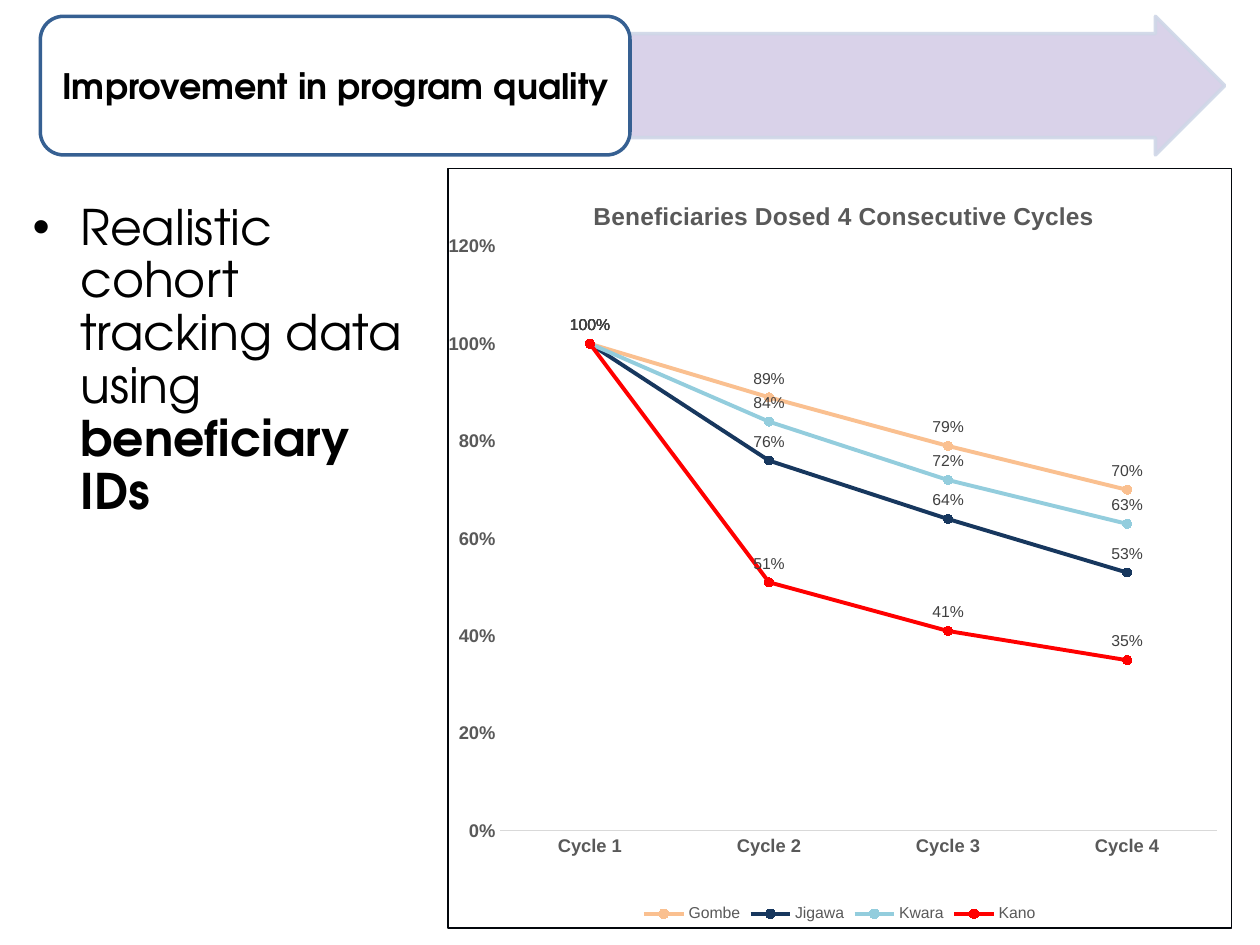
"""Build the slide on improvement in program quality."""
from dataclasses import dataclass

from lxml import etree
from pptx import Presentation
from pptx.chart.data import CategoryChartData
from pptx.dml.color import RGBColor
from pptx.enum.chart import (XL_CHART_TYPE, XL_LABEL_POSITION, XL_LEGEND_POSITION,
                             XL_MARKER_STYLE, XL_TICK_MARK)
from pptx.enum.shapes import MSO_SHAPE
from pptx.enum.text import MSO_ANCHOR, PP_ALIGN
from pptx.oxml import parse_xml
from pptx.oxml.ns import nsdecls, qn
from pptx.util import Inches, Pt

LINE_CHART = XL_CHART_TYPE.LINE_MARKERS
ABOVE = XL_LABEL_POSITION.ABOVE
BOTTOM = XL_LEGEND_POSITION.BOTTOM
CIRCLE = XL_MARKER_STYLE.CIRCLE
NO_TICK = XL_TICK_MARK.NONE
ARROW, ROUNDED = MSO_SHAPE.RIGHT_ARROW, MSO_SHAPE.ROUNDED_RECTANGLE
TOP, MIDDLE = MSO_ANCHOR.TOP, MSO_ANCHOR.MIDDLE
LEFT, CENTER = PP_ALIGN.LEFT, PP_ALIGN.CENTER
COLUMNS, ROWS = 100, 75


@dataclass(frozen=True)
class Theme:
    """Colours, fonts and type sizes of the slide."""
    text_font: str = "TeX Gyre Adventor"
    chart_font: str = "Arial"
    black: str = "000000"
    white: str = "FFFFFF"
    lilac: str = "D9D2E9"
    pale_blue: str = "CFD7E7"
    blue: str = "366092"
    border: str = "03070C"
    axis_text: str = "595959"
    label_text: str = "404040"
    axis_line: str = "D9D9D9"
    heading: float = 20
    body: float = 28
    chart_title: float = 14
    axis: float = 10.5
    small: float = 9


def apply(target, values):
    """Set every attribute in values on the target."""
    for name, value in values.items():
        setattr(target, name, value)


class SlideBuilder:
    """Place styled elements on a slide by grid columns and rows."""

    def __init__(self, presentation, theme):
        self.theme = theme
        self.width = presentation.slide_width
        self.height = presentation.slide_height
        self.slide = presentation.slides.add_slide(presentation.slide_layouts[6])

    def place(self, left, top, width, height):
        """Turn grid units into slide lengths."""
        column, row = self.width / COLUMNS, self.height / ROWS
        return [round(n) for n in (left * column, top * row, width * column, height * row)]

    def font(self, font, family, size, color, bold=False):
        """Style one font."""
        apply(font, {"name": family, "size": Pt(size), "bold": bold})
        font.color.rgb = RGBColor.from_string(color)

    def paint(self, fill, color):
        """Give a solid fill."""
        fill.solid()
        fill.fore_color.rgb = RGBColor.from_string(color)

    def stroke(self, line, color, width):
        """Give a solid line."""
        self.paint(line.fill, color)
        line.width = Pt(width)

    def shape(self, kind, area, fill, line, adjustments, opacity=100):
        """Add a preset shape with a 2 pt outline."""
        shape = self.slide.shapes.add_shape(kind, *self.place(*area))
        shape.shadow.inherit = False
        for index, value in enumerate(adjustments):
            shape.adjustments[index] = value
        self.paint(shape.fill, fill)
        self.stroke(shape.line, line, 2)
        if opacity < 100:
            color = shape.line._get_or_add_ln().find(".//" + qn("a:srgbClr"))
            etree.SubElement(color, qn("a:alpha"), val=str(opacity * 1000))

    def text(self, area, runs, size, insets, anchor=TOP, align=LEFT):
        """Add a text box of (text, bold) runs and return its paragraph."""
        frame = self.slide.shapes.add_textbox(*self.place(*area)).text_frame
        side, edge = (Inches(inset) for inset in insets)
        apply(frame, {"word_wrap": True, "vertical_anchor": anchor,
                      "margin_left": side, "margin_right": side,
                      "margin_top": edge, "margin_bottom": edge})
        paragraph = frame.paragraphs[0]
        paragraph.alignment = align
        for content, bold in runs:
            run = paragraph.add_run()
            run.text = content
            self.font(run.font, self.theme.text_font, size, self.theme.black, bold)
        return paragraph

    def bullet(self, area, runs, size):
        """Add a bulleted paragraph with a hanging indent."""
        paragraph = self.text(area, runs, size, (0.1, 0.05))
        apply(paragraph, {"line_spacing": 0.9, "space_before": Pt(10)})
        properties = paragraph._p.get_or_add_pPr()
        properties.set("marL", str(Inches(0.5)))
        properties.set("indent", str(Inches(-0.38)))
        color = etree.SubElement(properties, qn("a:buClr"))
        etree.SubElement(color, qn("a:srgbClr"), val=self.theme.black)
        etree.SubElement(properties, qn("a:buFont"), typeface=self.theme.chart_font)
        etree.SubElement(properties, qn("a:buChar"), char="•")

    def layout(self, parent, values, before):
        """Fix the position of a chart part by shares of the chart."""
        for old in parent.findall(qn("c:layout")):
            parent.remove(old)
        items = "".join(f'<c:{name} val="{value}"/>' for name, value in values.items())
        layout = parse_xml(f'<c:layout {nsdecls("c")}><c:manualLayout>{items}'
                           '</c:manualLayout></c:layout>')
        parent.insert(parent.index(parent.find(qn(before))), layout)

    def line_chart(self, area, title, categories, series):
        """Add a percentage line chart from name: (colour, values)."""
        theme = self.theme
        data = CategoryChartData(number_format="0%")
        data.categories = categories
        for name, (_, values) in series.items():
            data.add_series(name, values)
        chart = self.slide.shapes.add_chart(LINE_CHART, *self.place(*area), data).chart
        self.font(chart.font, theme.chart_font, 10, theme.black)
        self.chart_frame(chart, title)
        for axis in (chart.category_axis, chart.value_axis):
            apply(axis, {"major_tick_mark": NO_TICK, "minor_tick_mark": NO_TICK,
                         "has_major_gridlines": False})
            self.font(axis.tick_labels.font, theme.chart_font, theme.axis, theme.axis_text, True)
        self.stroke(chart.category_axis.format.line, theme.axis_line, 0.75)
        value_axis = chart.value_axis
        apply(value_axis, {"minimum_scale": 0, "maximum_scale": 1.2, "major_unit": 0.2})
        apply(value_axis.tick_labels, {"number_format": "0%", "number_format_is_linked": False})
        value_axis.format.line.fill.background()
        for line, (color, _) in zip(chart.plots[0].series, series.values()):
            self.series(line, color)

    def chart_frame(self, chart, title):
        """Style the title, legend, plot area and border of a chart."""
        theme = self.theme
        apply(chart, {"has_title": True, "has_legend": True})
        paragraph = chart.chart_title.text_frame.paragraphs[0]
        run = paragraph.add_run()
        run.text = title
        self.font(run.font, theme.chart_font, theme.chart_title, theme.axis_text, True)
        self.layout(chart.chart_title._element, {
            "xMode": "edge", "yMode": "edge", "x": 0.18, "y": 0.036}, "c:overlay")
        apply(chart.legend, {"position": BOTTOM, "include_in_layout": False})
        self.font(chart.legend.font, theme.chart_font, theme.small, theme.axis_text)
        self.layout(chart._chartSpace.chart.plotArea, {
            "layoutTarget": "inner", "xMode": "edge", "yMode": "edge",
            "x": 0.067, "y": 0.103, "w": 0.914, "h": 0.769}, "c:lineChart")
        frame = parse_xml(
            f'<c:spPr {nsdecls("c", "a")}><a:solidFill><a:srgbClr val="{theme.white}"/>'
            f'</a:solidFill><a:ln w="{Pt(0.75)}"><a:solidFill><a:srgbClr val="{theme.border}"/>'
            '</a:solidFill></a:ln></c:spPr>')
        chart._chartSpace.chart.addnext(frame)

    def series(self, line, color):
        """Style one line with its markers and labels."""
        line.smooth = False
        self.stroke(line.format.line, color, 2.25)
        apply(line.marker, {"style": CIRCLE, "size": 5})
        self.paint(line.marker.format.fill, color)
        self.stroke(line.marker.format.line, color, 0.75)
        labels = line.data_labels
        apply(labels, {"show_value": True, "position": ABOVE,
                       "number_format": "0%", "number_format_is_linked": False})
        self.font(labels.font, self.theme.chart_font, self.theme.small, self.theme.label_text)


def main():
    """Build and save the presentation."""
    presentation = Presentation()
    apply(presentation, {"slide_width": Inches(10), "slide_height": Inches(7.5)})
    theme = Theme()
    builder = SlideBuilder(presentation, theme)
    builder.shape(ARROW, (50, 1.3, 47.2, 11), theme.lilac, theme.pale_blue, (0.75, 0.5), 89)
    builder.shape(ROUNDED, (3.2, 1.3, 46.8, 11), theme.white, theme.blue, (0.167,))
    builder.text((3.8, 1.8, 45.7, 9.9), [("Improvement in program quality", True)],
                 theme.heading, (0.08, 0.04), MIDDLE, CENTER)
    builder.bullet((0.4, 15.6, 33.3, 54), [("Realistic cohort tracking data using ", False),
                                           ("beneficiary IDs", True)], theme.body)
    builder.line_chart(
        (35.5, 13.3, 62.3, 60.4), "Beneficiaries Dosed 4 Consecutive Cycles",
        [f"Cycle {number}" for number in range(1, 5)],
        {"Gombe": ("FAC090", (1, 0.89, 0.79, 0.7)),
         "Jigawa": ("17375E", (1, 0.76, 0.64, 0.53)),
         "Kwara": ("93CDDD", (1, 0.84, 0.72, 0.63)),
         "Kano": ("FF0000", (1, 0.51, 0.41, 0.35))})
    presentation.save("out.pptx")


if __name__ == "__main__":
    main()
